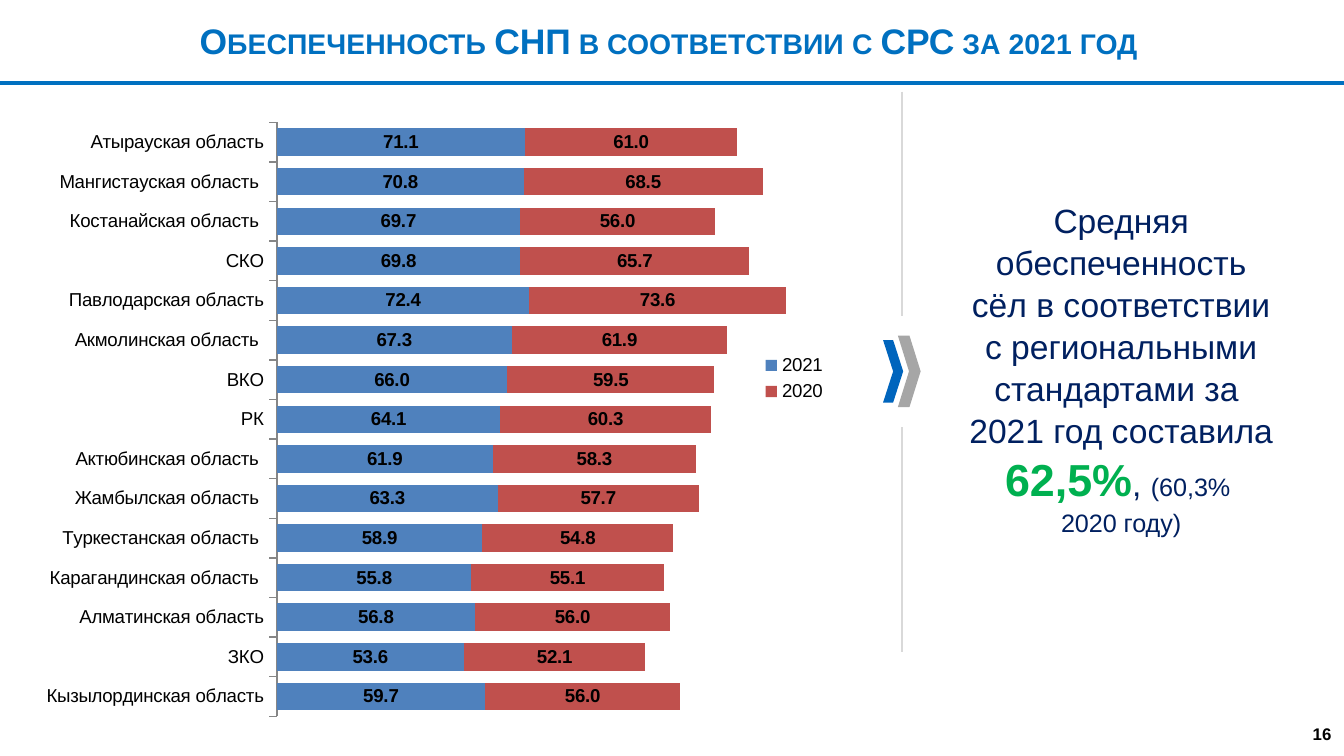
import pptx
import pptx.chart.data
import pptx.dml.color
import pptx.enum.chart
import pptx.enum.shapes
import pptx.enum.text
import pptx.oxml.ns
import pptx.util
from lxml import etree

Cm = pptx.util.Cm
Pt = pptx.util.Pt
RGB = pptx.dml.color.RGBColor
qn = pptx.oxml.ns.qn

BLUE = RGB(0x00, 0x70, 0xC0)
DEEP = RGB(0x00, 0x65, 0xBD)
NAVY = RGB(0x00, 0x20, 0x60)
GREEN = RGB(0x00, 0xB0, 0x50)
GRAY = RGB(0xA6, 0xA6, 0xA6)
PALE = RGB(0xD9, 0xD9, 0xD9)
AXIS = RGB(0x86, 0x86, 0x86)
BLACK = RGB(0, 0, 0)
BAR_NEW = RGB(0x4F, 0x81, 0xBD)
BAR_OLD = RGB(0xC0, 0x50, 0x4D)

# Region, 2021, 2020; from the bottom bar up
RATES = [
    ("Кызылординская область", 59.7, 56),
    ("ЗКО", 53.6, 52.1),
    ("Алматинская область", 56.8, 56),
    ("Карагандинская область ", 55.8, 55.1),
    ("Туркестанская область ", 58.9, 54.8),
    ("Жамбылская область ", 63.3, 57.7),
    ("Актюбинская область ", 61.9, 58.3),
    ("РК", 64.1, 60.3),
    ("ВКО", 66, 59.5),
    ("Акмолинская область ", 67.3, 61.9),
    ("Павлодарская область", 72.4, 73.6),
    ("СКО", 69.8, 65.7),
    ("Костанайская область ", 69.7, 56),
    ("Мангистауская область ", 70.8, 68.5),
    ("Атырауская область", 71.1, 61),
]


def write(par, text, size=18, color=NAVY, bold=False, caps=False):
    """Add one formatted run to a paragraph."""
    run = par.add_run()
    run.text = text
    font = run.font
    font.name, font.size, font.bold = "Arial", Pt(size), bold
    font.color.rgb = color
    if caps:
        run._r.get_or_add_rPr().set("cap", "small")


def arrange(node, index, x, y, w, h, inner=False):
    """Give a chart part a manual layout, in fractions of the chart."""
    for old in node.findall(qn("c:layout")):
        node.remove(old)
    layout = etree.Element(qn("c:layout"))
    node.insert(index, layout)
    manual = etree.SubElement(layout, qn("c:manualLayout"))
    pairs = [("layoutTarget", "inner")] if inner else []
    pairs += [("xMode", "edge"), ("yMode", "edge"),
              ("x", x), ("y", y), ("w", w), ("h", h)]
    for tag, value in pairs:
        etree.SubElement(manual, qn("c:" + tag)).set("val", str(value))


class Deck:
    """Holds the presentation and the current slide; lengths are in cm."""

    def __init__(self, width, height):
        self.prs = pptx.Presentation()
        self.prs.slide_width, self.prs.slide_height = Cm(width), Cm(height)
        self.slide = self.prs.slides.add_slide(self.prs.slide_layouts[5])
        self.shapes = self.slide.shapes

    def title(self, text, x, y, w, h):
        box = self.shapes.title
        box.left, box.top, box.width, box.height = map(Cm, (x, y, w, h))
        frame = box.text_frame
        frame.auto_size = pptx.enum.text.MSO_AUTO_SIZE.NONE
        frame.vertical_anchor = pptx.enum.text.MSO_ANCHOR.MIDDLE
        par = frame.paragraphs[0]
        par.alignment = pptx.enum.text.PP_ALIGN.CENTER
        write(par, text, size=19, color=BLUE, bold=True, caps=True)

    def box(self, x, y, w, h, wrap=True):
        frame = self.shapes.add_textbox(*map(Cm, (x, y, w, h))).text_frame
        frame.word_wrap = wrap
        return frame

    def line(self, x1, y1, x2, y2, color, width):
        kind = pptx.enum.shapes.MSO_CONNECTOR.STRAIGHT
        line = self.shapes.add_connector(kind, *map(Cm, (x1, y1, x2, y2)))
        line.line.color.rgb = color
        line.line.width = Pt(width)
        etree.SubElement(line._element.spPr, qn("a:effectLst"))

    def chevron(self, x, mid, w, h, cut, color):
        """Right-pointing chevron centred on the height mid."""
        top, low = mid - h / 2, mid + h / 2
        points = [(x + w - cut, low), (x + w, mid), (x + w - cut, top),
                  (x, top), (x + cut, mid)]
        pen = self.shapes.build_freeform(Cm(x), Cm(low))
        pen.add_line_segments([(Cm(a), Cm(b)) for a, b in points], close=True)
        shape = pen.convert_to_shape()
        shape.shadow.inherit = False
        shape.fill.solid()
        shape.fill.fore_color.rgb = color
        shape.line.fill.background()

    def bars(self, x, y, w, h):
        enum = pptx.enum.chart
        data = pptx.chart.data.CategoryChartData()
        names, new, old = zip(*RATES)
        data.categories = names
        data.add_series("2021", new)
        data.add_series("2020", old)
        chart = self.shapes.add_chart(enum.XL_CHART_TYPE.BAR_STACKED,
                                      *map(Cm, (x, y, w, h)), data).chart
        chart.has_title = False
        font = chart.font
        font.name, font.size = "Arial", Pt(10)
        font.color.rgb = BLACK

        plot = chart.plots[0]
        plot.gap_width, plot.overlap = 44, 100
        plot.vary_by_categories = False
        for series, color in zip(plot.series, (BAR_NEW, BAR_OLD)):
            series.format.fill.solid()
            series.format.fill.fore_color.rgb = color
            labels = series.data_labels
            labels.show_value = True
            labels.number_format = "0.0"
            labels.number_format_is_linked = False
            font = labels.font
            font.name, font.size, font.bold = "Arial", Pt(10), True
            font.color.rgb = BLACK

        axis = chart.category_axis
        axis.major_tick_mark = enum.XL_TICK_MARK.OUTSIDE
        axis.format.line.color.rgb = AXIS
        axis = chart.value_axis
        axis.minimum_scale, axis.maximum_scale = 0, 160
        axis.has_major_gridlines = False
        axis.visible = False

        chart.has_legend = True
        legend = chart.legend
        legend.position = enum.XL_LEGEND_POSITION.RIGHT
        legend.include_in_layout = False
        arrange(legend._element, 1, 0.85, 0.39, 0.09, 0.09)
        arrange(chart._chartSpace.chart.plotArea, 0,
                0.284, 0.032, 0.659, 0.935, inner=True)


def main():
    deck = Deck(25.4, 14.29)
    deck.title("Обеспеченность СНП в соответствии с СРС за 2021 год",
               0, 0.1, 25.27, 1.32)
    deck.line(0, 1.57, 25.4, 1.57, BLUE, 2.25)
    deck.bars(0.69, 1.93, 16, 12.01)

    for top in (1.73, 8.08):
        deck.line(17.04, top, 17.04, top + 4.24, PALE, 1)
    deck.chevron(16.69, 7.02, 0.38, 1.18, 0.19, DEEP)
    deck.chevron(16.97, 7.02, 0.43, 1.35, 0.21, GRAY)

    frame = deck.box(18.03, 3.63, 6.32, 6.48)
    par, last = frame.paragraphs[0], frame.add_paragraph()
    for item in (par, last):
        item.alignment = pptx.enum.text.PP_ALIGN.CENTER
        item.line_spacing = 1.04
    write(par, "Средняя обеспеченность сёл в соответствии "
               "с региональными стандартами за ")
    par.add_line_break()
    write(par, "2021 год составила ")
    write(par, "62,5%", size=24, color=GREEN, bold=True)
    write(par, ", ")
    write(par, "(60,3% ", size=13.5)
    write(last, "2020 году)", size=13.5)

    page = deck.box(24.56, 13.56, 0.86, 0.64, wrap=False)
    write(page.paragraphs[0], "16", size=9, color=BLACK, bold=True)
    deck.prs.save("out.pptx")


if __name__ == "__main__":
    main()
